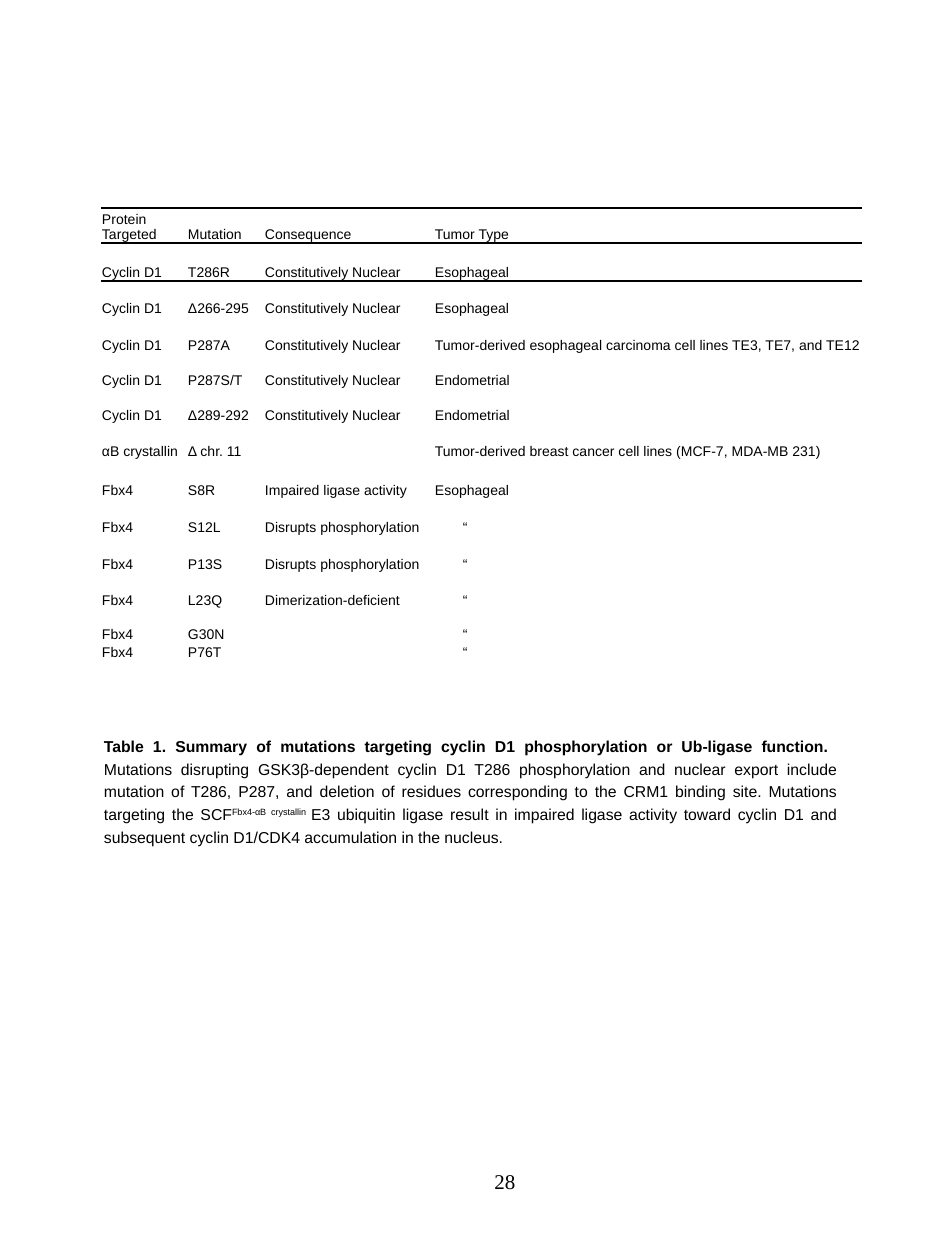
from dataclasses import dataclass
from lxml import etree
from pptx import Presentation
from pptx.dml.color import RGBColor
from pptx.enum.text import MSO_ANCHOR, PP_ALIGN
from pptx.oxml.ns import qn
from pptx.util import Pt

BOTTOM = MSO_ANCHOR.BOTTOM
JUSTIFY = PP_ALIGN.JUSTIFY
PX = 914400 // 126
PLAIN = "{2D5ABB26-0587-4C30-8999-92F81FD0307C}"


@dataclass(frozen=True)
class Theme:
    ink: str = "000000"
    sans: str = "Arial"
    serif: str = "Times New Roman"
    cell: int = 8
    body: int = 9
    page: int = 12
    rule: int = 1


THEME = Theme()
DITTO = "“"
NUCLEAR = "Constitutively Nuclear"
PHOS = "Disrupts phosphorylation\t“"
WIDTHS = (86, 77, 120, 50, 101, 20, 11, 5, 82, 13, 94, 102)
DITTO_PAD, DITTO_TAB = 79, 198
THREE = (1, 1, 2, 3, 2, 1, 1, 1)
PAIRS = (1, 1, 2, 2, 2, 2, 1, 1)
JOINT = (1, 1, 3, 3, 2, 1, 1)
SPLIT = (1, 1, 1, 2, 3, 2, 1, 1)
ROWS = [
    (35, THREE, ("Protein Targeted", "Mutation", "Consequence", "Tumor Type")),
    (38, THREE, ("Cyclin D1", "T286R", NUCLEAR, "Esophageal")),
    (36, THREE, ("Cyclin D1", "Δ266-295", NUCLEAR, "Esophageal")),
    (37, (1, 1, 2, 8), ("Cyclin D1", "P287A", NUCLEAR,
     "Tumor-derived esophageal carcinoma cell lines TE3, TE7, and TE12")),
    (35, PAIRS, ("Cyclin D1", "P287S/T", NUCLEAR, "Endometrial")),
    (35, PAIRS, ("Cyclin D1", "Δ289-292", NUCLEAR, "Endometrial")),
    (36, (1, 3, 8), ("αB crystallin", "Δ chr. 11",
     "Tumor-derived breast cancer cell lines (MCF-7, MDA-MB 231)")),
    (39, (1, 1, 2, 1, 3, 2, 1, 1),
     ("Fbx4", "S8R", "Impaired ligase activity", "Esophageal")),
    (37, JOINT, ("Fbx4", "S12L", PHOS)),
    (37, JOINT, ("Fbx4", "P13S", PHOS)),
    (36, JOINT, ("Fbx4", "L23Q", "Dimerization-deficient\t“")),
    (34, SPLIT, ("Fbx4", "G30N", "", DITTO)),
    (18, SPLIT, ("Fbx4", "P76T", "", DITTO)),
]
CAPTION = [
    ("Table 1. Summary of mutations targeting cyclin D1 phosphorylation "
     "or Ub-ligase function.", "bold"),
    ("  Mutations disrupting GSK3β-dependent cyclin D1 T286 phosphorylation "
     "and nuclear export include mutation of T286, P287, and deletion of "
     "residues corresponding to the CRM1 binding site. Mutations targeting "
     "the SCF", ""),
    ("Fbx4-αB crystallin ", "super"),
    ("E3 ubiquitin ligase result in impaired ligase activity toward cyclin D1 "
     "and subsequent cyclin D1/CDK4 accumulation in the nucleus.", ""),
]
NUMBER = "28"


def style(para, size, face):
    font = para.font
    font.size, font.name = Pt(size), face
    font.color.rgb = RGBColor.from_string(THEME.ink)


def rule(cell, side):
    props = cell._tc.get_or_add_tcPr()
    line = etree.SubElement(props, qn("a:" + side), w=str(Pt(THEME.rule)))
    fill = etree.SubElement(line, qn("a:solidFill"))
    etree.SubElement(fill, qn("a:srgbClr"), val=THEME.ink)


def add_tab(para, pos):
    props = para._p.get_or_add_pPr()
    tabs = etree.Element(qn("a:tabLst"))
    etree.SubElement(tabs, qn("a:tab"), pos=str(pos * PX), algn="l")
    props.insert(0, tabs)


def set_cell(cell, row, word):
    cell.text = word
    cell.vertical_anchor = BOTTOM
    cell.margin_left = (DITTO_PAD if word == DITTO else 1) * PX
    cell.margin_top = PX
    cell.margin_right = cell.margin_bottom = 0
    para = cell.text_frame.paragraphs[0]
    style(para, THEME.cell, THEME.sans)
    if "\t" in word:
        add_tab(para, DITTO_TAB)
    if row < 2:
        rule(cell, "lnT")
    if row == 0:
        rule(cell, "lnB")
    cell.fill.background()


def add_grid(slide, left, top):
    high = sum(row[0] for row in ROWS)
    box = [n * PX for n in (left, top, sum(WIDTHS), high)]
    table = slide.shapes.add_table(len(ROWS), len(WIDTHS), *box).table
    table.first_row = table.horz_banding = False
    table._tbl.tblPr.find(qn("a:tableStyleId")).text = PLAIN
    for col, width in zip(table.columns, WIDTHS):
        col.width = width * PX
    for r, (height, spans, words) in enumerate(ROWS):
        table.rows[r].height = height * PX
        starts = [sum(spans[:i]) for i in range(len(spans))]
        texts = dict(zip(starts, words))
        for c in range(len(WIDTHS)):
            set_cell(table.cell(r, c), r, texts.get(c, ""))
        for c, span in zip(starts, spans):
            if span > 1:
                table.cell(r, c).merge(table.cell(r, c + span - 1))


def add_text(slide, box, runs, size, face, wrap):
    frame = slide.shapes.add_textbox(*[n * PX for n in box]).text_frame
    frame.word_wrap = wrap
    para = frame.paragraphs[0]
    style(para, size, face)
    for words, look in runs:
        run = para.add_run()
        run.text = words
        if look == "bold":
            run.font.bold = True
        if look == "super":
            run._r.get_or_add_rPr().set("baseline", "30000")
    return frame


def main():
    deck = Presentation()
    deck.slide_width, deck.slide_height = 945 * PX, 1260 * PX
    slide = deck.slides.add_slide(deck.slide_layouts[6])
    frame = add_text(slide, (91, 721, 759, 140), CAPTION,
                     THEME.body, THEME.sans, True)
    frame.margin_left = frame.margin_right = 13 * PX
    frame.margin_top = frame.margin_bottom = 12 * PX
    para = frame.paragraphs[0]
    para.alignment, para.line_spacing = JUSTIFY, 1.2
    add_text(slide, (482, 1162, 47, 38), [(NUMBER, "")],
             THEME.page, THEME.serif, False)
    add_grid(slide, 101, 208)
    deck.save("out.pptx")


if __name__ == "__main__":
    main()
